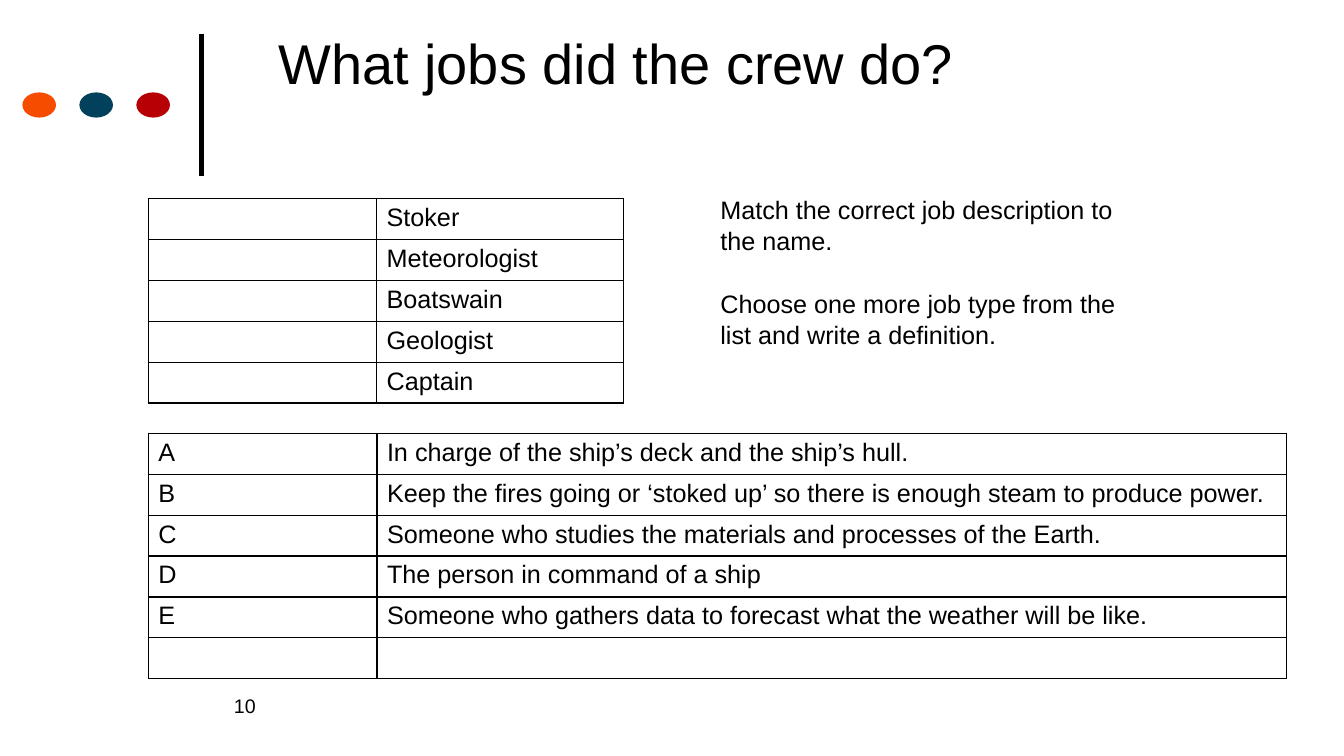
from dataclasses import dataclass

from lxml import etree
from pptx import Presentation
from pptx.dml.color import RGBColor
from pptx.enum.shapes import MSO_CONNECTOR as CONN, MSO_SHAPE as SHAPE
from pptx.enum.text import PP_ALIGN as ALIGN
from pptx.oxml.ns import qn
from pptx.util import Pt


@dataclass(frozen=True)
class Theme:
    font: str = "Arial"
    ink: str = "000000"
    dots: tuple = ("F54C00", "01415B", "B70005")
    title: int = 40
    body: int = 18
    number: int = 14
    rule: int = 3
    border: int = 1


THEME = Theme()
ROW_H = 29.25
TABLE_LEFT = 106

JOBS = ["Stoker", "Meteorologist", "Boatswain", "Geologist", "Captain"]
DESCRIPTIONS = [
    ("A", "In charge of the ship’s deck and the ship’s hull."),
    ("B", "Keep the fires going or ‘stoked up’ so there is enough steam to produce power."),
    ("C", "Someone who studies the materials and processes of the Earth."),
    ("D", "The person in command of a ship"),
    ("E", "Someone who gathers data to forecast what the weather will be like."),
    ("", ""),
]
TASKS = [
    "Match the correct job description to the name.",
    "Choose one more job type from the list and write a definition.",
]


def color(value):
    return RGBColor.from_string(value)


def add_run(p, text, size):
    r = p.add_run()
    r.text = text
    r.font.name = THEME.font
    r.font.size = Pt(size)
    r.font.color.rgb = color(THEME.ink)


def add_text(slide, box, paragraphs, size, align=ALIGN.LEFT, gap=0, spacing=1):
    tf = slide.shapes.add_textbox(*map(Pt, box)).text_frame
    tf.word_wrap = True
    for i, text in enumerate(paragraphs):
        p = tf.add_paragraph() if i else tf.paragraphs[0]
        p.alignment = align
        p.line_spacing = spacing
        if i:
            p.space_before = Pt(gap)
        add_run(p, text, size)


def add_dot(slide, left, fill):
    sp = slide.shapes.add_shape(SHAPE.OVAL, Pt(left), Pt(66), Pt(24), Pt(18))
    sp.shadow.inherit = False
    sp.fill.solid()
    sp.fill.fore_color.rgb = color(fill)
    sp.line.fill.background()


def add_rule(slide, x, top, bottom):
    line = slide.shapes.add_connector(CONN.STRAIGHT, Pt(x), Pt(bottom), Pt(x), Pt(top))
    line.line.color.rgb = color(THEME.ink)
    line.line.width = Pt(THEME.rule)
    etree.SubElement(line._element.spPr, qn("a:effectLst"))


def add_borders(cell):
    tc_pr = cell._tc.get_or_add_tcPr()
    for i, side in enumerate(("lnL", "lnR", "lnT", "lnB")):
        ln = etree.Element(qn(f"a:{side}"), w=str(Pt(THEME.border)))
        fill = etree.SubElement(ln, qn("a:solidFill"))
        etree.SubElement(fill, qn("a:srgbClr"), val=THEME.ink)
        tc_pr.insert(i, ln)


def add_grid(slide, top, widths, rows):
    frame = slide.shapes.add_table(
        len(rows), len(widths), Pt(TABLE_LEFT), Pt(top),
        Pt(sum(widths)), Pt(ROW_H * len(rows)))
    table = frame.table
    table.first_row = table.horz_banding = False
    for column, width in zip(table.columns, widths):
        column.width = Pt(width)
    for row, texts in zip(table.rows, rows):
        row.height = Pt(ROW_H)
        for cell, text in zip(row.cells, texts):
            cell.fill.background()
            add_borders(cell)
            p = cell.text_frame.paragraphs[0]
            if text:
                add_run(p, text, THEME.body)
            else:
                p.font.size = Pt(THEME.body)


def main():
    prs = Presentation()
    prs.slide_width, prs.slide_height = Pt(960), Pt(540)
    slide = prs.slides.add_slide(prs.slide_layouts[6])

    add_rule(slide, 144, 24, 126)
    for i, fill in enumerate(THEME.dots):
        add_dot(slide, 16 + 40.7 * i, fill)

    add_text(slide, (155, 16.5, 569.5, 50), ["What jobs did the crew do?"],
             THEME.title, ALIGN.CENTER)
    add_text(slide, (160, 492, 136, 36), ["10"], THEME.number)
    add_grid(slide, 141.75, (163, 176.5), [("", job) for job in JOBS])
    add_grid(slide, 309.5, (163.25, 650), DESCRIPTIONS)
    add_text(slide, (507.5, 134, 311, 116.5), TASKS, THEME.body, gap=21.75, spacing=1.05)

    prs.save("out.pptx")


if __name__ == "__main__":
    main()
